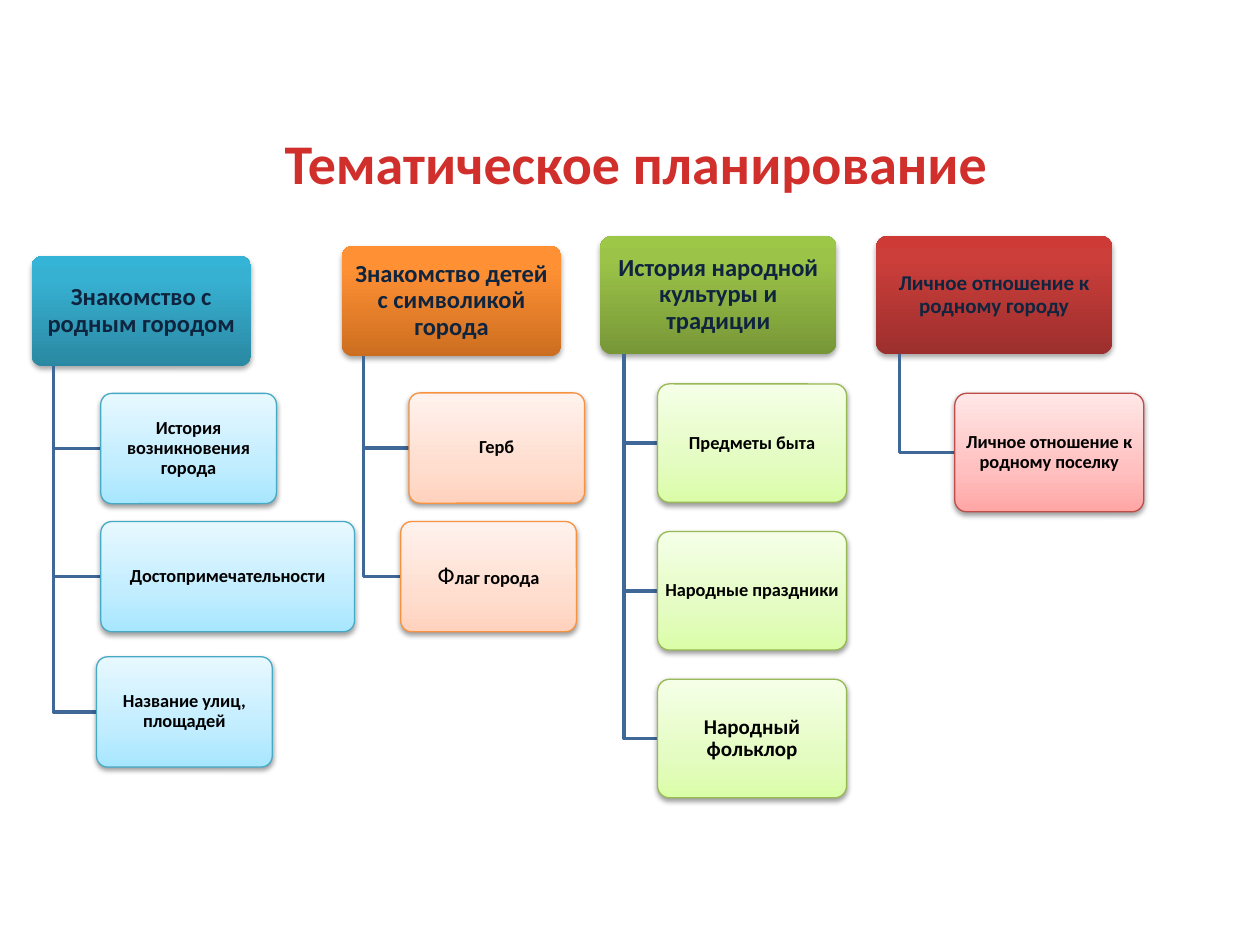
from copy import deepcopy

from lxml.etree import SubElement
from pptx import Presentation
from pptx.dml.color import RGBColor
from pptx.enum.shapes import MSO_SHAPE
from pptx.enum.text import MSO_ANCHOR, PP_ALIGN
from pptx.oxml.ns import qn
from pptx.util import Pt

FONT = "Calibri"
TITLE = "Тематическое планирование"
TITLE_COLOR = RGBColor(0xD0, 0x2F, 0x2C)
HEADER_TEXT = RGBColor(0x0F, 0x24, 0x3E)
TOPIC_TEXT = RGBColor(0, 0, 0)
ELBOW_COLOR = RGBColor(0x3F, 0x67, 0x97)

HEADER_STOPS = (0, 0.8, 1)
TOPIC_STOPS = (0, 0.35, 1)
SMALL_SIZE = (125.5, 63)
LARGE_SIZE = (135, 67.7)
TOPIC_WIDTH_RATIO = 0.8

# Each topic: text runs with size and bold, left, top, optional width
BRANCHES = [
    {
        "header": ("Знакомство с родным городом", 14), "at": (18, 146.3), "size": SMALL_SIZE,
        "header_colors": ("2A88A2", "37B1D2", "34B4D6"),
        "topic_colors": ("A7E6FF", "C1EDFF", "E7F8FF"), "outline": "46AAC5",
        "topics": [
            ([("История возникновения города", 10.5, True)], 57.6, 224.8, None),
            ([("Достопримечательности", 10.5, True)], 57.6, 298, 145),
            ([("Название улиц, площадей", 10.5, True)], 55.2, 375.3, None),
        ],
    },
    {
        "header": ("Знакомство детей с символикой города", 14), "at": (195.3, 140.5), "size": SMALL_SIZE,
        "header_colors": ("CC6E20", "FF9034", "FF9136"),
        "topic_colors": ("FFD2BD", "FFDED0", "FFF2ED"), "outline": "F69240",
        "topics": [
            ([("Герб", 10.5, True)], 233.7, 224.5, None),
            ([("Ф", 14, False), ("лаг города", 10.5, True)], 229, 298, None),
        ],
    },
    {
        "header": ("История народной культуры и традиции", 14), "at": (343, 134.8), "size": LARGE_SIZE,
        "header_colors": ("779737", "9BC348", "9DC746"),
        "topic_colors": ("DAFDA7", "E4FCC2", "F5FFE7"), "outline": "98B955",
        "topics": [
            ([("Предметы быта", 10.5, True)], 375.8, 219.4, None),
            ([("Народные праздники", 10.5, True)], 375.8, 303.8, None),
            ([("Народный фольклор", 12, True)], 375.8, 388.2, None),
        ],
    },
    {
        "header": ("Личное отношение к родному городу", 12), "at": (500.6, 134.8), "size": LARGE_SIZE,
        "header_colors": ("9C2F2D", "CB3E3A", "CE3B37"),
        "topic_colors": ("FFA6A5", "FFC0BF", "FFE7E7"), "outline": "BF4C48",
        "topics": [([("Личное отношение к родному поселку", 10.5, True)], 545.6, 224.8, None)],
    },
]


def write_text(shape, runs, color):
    frame = shape.text_frame
    frame.word_wrap = True
    frame.vertical_anchor = MSO_ANCHOR.MIDDLE
    frame.margin_left = frame.margin_right = Pt(1.8)
    frame.margin_top = frame.margin_bottom = Pt(1.4)
    para = frame.paragraphs[0]
    para.alignment = PP_ALIGN.CENTER
    para.line_spacing = 0.9
    for text, size, bold in runs:
        span = para.add_run()
        span.text = text
        span.font.name = FONT
        span.font.size = Pt(size)
        span.font.bold = bold
        span.font.color.rgb = color


def fill_gradient(shape, colors, positions):
    shape.fill.gradient()
    shape.fill.gradient_angle = 90
    stop_list = shape._element.spPr.find(qn("a:gradFill")).find(qn("a:gsLst"))
    stop_list.insert(1, deepcopy(stop_list[0]))
    for stop, color, position in zip(shape.fill.gradient_stops, colors, positions):
        stop.color.rgb = RGBColor.from_string(color)
        stop.position = position


def cast_shadow(shape, distance, opacity):
    shape.shadow.inherit = False
    effects = shape._element.spPr.find(qn("a:effectLst"))
    shadow = SubElement(effects, qn("a:outerShdw"), blurRad=str(Pt(3.1)), dist=str(Pt(distance)),
                        dir="5400000", rotWithShape="0")
    color = SubElement(shadow, qn("a:srgbClr"), val="000000")
    SubElement(color, qn("a:alpha"), val=str(opacity * 1000))


def add_card(slide, bounds, runs, text_color, colors, positions, outline=None):
    card = slide.shapes.add_shape(MSO_SHAPE.ROUNDED_RECTANGLE, *map(Pt, bounds))
    card.adjustments[0] = 0.1
    fill_gradient(card, colors, positions)
    if outline:
        card.line.color.rgb = RGBColor.from_string(outline)
        card.line.width = Pt(0.75)
        cast_shadow(card, 1.6, 38)
    else:
        card.line.fill.background()
        cast_shadow(card, 1.8, 35)
    write_text(card, runs, text_color)


def add_elbow(slide, trunk, start, end, middle):
    builder = slide.shapes.build_freeform(Pt(trunk), Pt(start))
    builder.add_line_segments([(Pt(trunk), Pt(middle)), (Pt(end), Pt(middle))], close=False)
    elbow = builder.convert_to_shape()
    elbow.fill.background()
    elbow.line.color.rgb = ELBOW_COLOR
    elbow.line.width = Pt(2)
    elbow.shadow.inherit = False


def add_branch(slide, branch):
    left, top = branch["at"]
    width, height = branch["size"]
    text, size = branch["header"]
    add_card(slide, (left, top, width, height), [(text, size, True)], HEADER_TEXT,
             branch["header_colors"], HEADER_STOPS)
    for runs, topic_left, topic_top, topic_width in branch["topics"]:
        add_elbow(slide, left + width / 10, top + height, topic_left, topic_top + height / 2)
        bounds = (topic_left, topic_top, topic_width or width * TOPIC_WIDTH_RATIO, height)
        add_card(slide, bounds, runs, TOPIC_TEXT, branch["topic_colors"], TOPIC_STOPS, branch["outline"])


def main():
    deck = Presentation()
    deck.slide_width, deck.slide_height = Pt(720), Pt(540)
    slide = deck.slides.add_slide(deck.slide_layouts[6])
    title = slide.shapes.add_textbox(Pt(39.6), Pt(50.4), Pt(648), Pt(84.2))
    write_text(title, [(TITLE, 32, True)], TITLE_COLOR)
    title.text_frame.paragraphs[0].line_spacing = 1.0
    for branch in BRANCHES:
        add_branch(slide, branch)
    deck.save("out.pptx")


if __name__ == "__main__":
    main()
